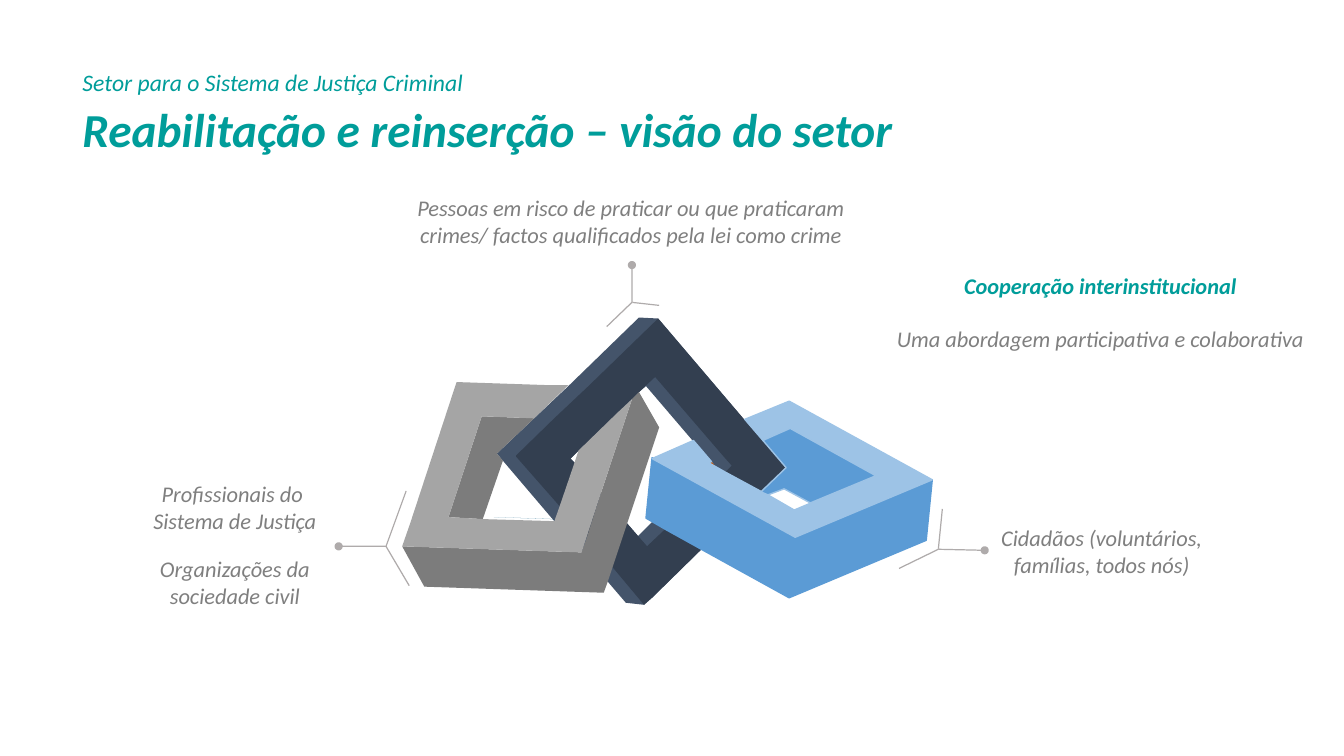
import math

import pptx
import pptx.dml.color
import pptx.enum.text
import pptx.util

Cm = pptx.util.Cm
Pt = pptx.util.Pt
RGBColor = pptx.dml.color.RGBColor
ANCHOR = pptx.enum.text.MSO_ANCHOR
ALIGN = pptx.enum.text.PP_ALIGN

TEAL = RGBColor(0x00, 0x9D, 0x9A)
TEXT_GRAY = RGBColor(0x7F, 0x7F, 0x7F)
CALLOUT_GRAY = RGBColor(0xAF, 0xAB, 0xAB)
LINK_GRAY = RGBColor(0xA5, 0xA5, 0xA5)
LINK_GRAY_DARK = RGBColor(0x7C, 0x7C, 0x7C)
NAVY = RGBColor(0x33, 0x3F, 0x50)
NAVY_LIGHT = RGBColor(0x44, 0x54, 0x6A)
PETROL = RGBColor(0x18, 0x66, 0x89)
ORANGE = RGBColor(0xC5, 0x5A, 0x11)
BLUE = RGBColor(0x5B, 0x9B, 0xD5)
BLUE_LIGHT = RGBColor(0x9D, 0xC3, 0xE6)

FONT = "Calibri"
GRID = Cm(2.54) // 100
DOT_RADIUS = 4
DOT_CORNERS = 24
ARM_WIDTH = 1.2

NAVY_SIDES = [
    [(241, 83), (234, 89), (213, 110), (174, 147), (166, 155), (170, 159),
     (222, 219), (233, 232), (247, 218), (307, 161), (308, 160), (288, 138)],
    [(234, 15), (253, 16), (339, 117), (380, 164), (356, 188), (296, 245),
     (247, 293), (239, 300), (221, 298), (203, 277), (150, 217), (93, 150),
     (130, 115), (164, 83)],
]
NAVY_FACE = [
    [(253, 16), (339, 117), (380, 164), (356, 188), (320, 168), (326, 162),
     (318, 153), (250, 74), (234, 89), (213, 110), (174, 147), (166, 155),
     (170, 159), (222, 219), (242, 242), (260, 225), (296, 245), (247, 293),
     (239, 300), (208, 263), (156, 203), (112, 153), (112, 152), (150, 115),
     (184, 83)],
]
GRAY_GLINT = [[(150, 215), (149, 215), (90, 213)]]
GRAY_INSIDE = [
    [(99, 157), (93, 150), (130, 115), (78, 113), (45, 213), (79, 215)],
]
GRAY_SIDE = [
    [(234, 89), (227, 96), (196, 190), (182, 234), (177, 248), (-1, 242),
     (21, 282), (199, 288), (203, 277), (222, 220), (254, 124)],
]
GRAY_FACE = [
    [(212, 110), (174, 147), (170, 159), (155, 203), (150, 217), (80, 215),
     (45, 213), (78, 113), (130, 115), (164, 82), (142, 82), (53, 79),
     (7, 219), (-1, 242), (177, 248), (196, 190), (227, 96)],
]
BLUE_JOINT = [[(307, 167), (311, 164), (305, 157), (297, 161)]]
BLUE_SIDE = [
    [(390, 233), (338, 204), (289, 177), (247, 154), (241, 214), (260, 225),
     (296, 245), (383, 293), (519, 236), (525, 176)],
]
BLUE_FACE = [
    [(383, 98), (344, 114), (339, 116), (357, 137), (384, 125), (469, 172),
     (388, 206), (362, 191), (356, 188), (319, 168), (303, 159), (306, 158),
     (288, 137), (247, 155), (289, 178), (338, 205), (389, 233), (525, 176)],
]
BLUE_INSIDE = [
    [(378, 185), (404, 199), (469, 172), (384, 125), (357, 137), (380, 164),
     (355, 188), (362, 191)],
]

LINK_PARTS = [
    (NAVY_SIDES, NAVY_LIGHT, None),
    (NAVY_FACE, NAVY, None),
    (GRAY_GLINT, PETROL, None),
    (GRAY_INSIDE, LINK_GRAY_DARK, None),
    (GRAY_SIDE, LINK_GRAY_DARK, None),
    (GRAY_FACE, LINK_GRAY, None),
    (BLUE_JOINT, ORANGE, None),
    (BLUE_SIDE, BLUE, BLUE),
    (BLUE_FACE, BLUE_LIGHT, BLUE_LIGHT),
    (BLUE_INSIDE, BLUE, BLUE_LIGHT),
]

CALLOUTS = [
    ((-64, 242), (-17, 242), [(3, 187), (6, 281)]),
    ((227, -37), (227, 0), [(202, 24), (254, 3)]),
    ((577, 246), (531, 245), [(535, 205), (492, 264)]),
]
LABELS = [
    ("Cidadãos (voluntários, famílias, todos nós)", (592, 214, 202, 64)),
    ("Profissionais do \nSistema de Justiça", (-261, 171, 188, 64)),
    ("Pessoas em risco de praticar ou que praticaram crimes/ factos "
     "qualificados pela lei como crime", (8, -113, 436, 64)),
    ("Organizações da sociedade civil", (-261, 245, 188, 64)),
]


def style_runs(paragraph, size, color, bold=False):
    for run in paragraph.runs:
        run.font.name = FONT
        run.font.size = Pt(size)
        run.font.color.rgb = color
        run.font.bold = bold
        run.font.italic = True


def add_text(slide, box, text, size, color, bold=False, align=ALIGN.LEFT):
    label = slide.shapes.add_textbox(*box)
    frame = label.text_frame
    frame.text = text
    frame.word_wrap = True
    for paragraph in frame.paragraphs:
        paragraph.alignment = align
        style_runs(paragraph, size, color, bold)
    return frame


def add_heading(slide, left, top, width):
    add_text(slide, (left, top, width, Cm(0.99)),
             "Setor para o Sistema de Justiça Criminal", 16.9, TEAL)
    add_text(slide, (left, top + Cm(0.81), width, Cm(1.7)),
             "Reabilitação e reinserção – visão do setor", 33.8, TEAL, True)


def add_cooperation(slide, left, top, width, height):
    frame = add_text(slide, (left, top, width, height),
                     "Cooperação interinstitucional\n"
                     "Uma abordagem participativa e colaborativa",
                     16, TEAL, True, ALIGN.CENTER)
    approach = frame.paragraphs[1]
    approach.space_before = Pt(19)
    style_runs(approach, 16, TEXT_GRAY)


def add_outlines(slide, left, top, outlines, fill, edge=None):
    rings = [[(x * GRID, y * GRID) for x, y in outline]
             for outline in outlines]
    builder = slide.shapes.build_freeform(*rings[0][0])
    builder.add_line_segments(rings[0][1:], close=True)
    for ring in rings[1:]:
        builder.move_to(*ring[0])
        builder.add_line_segments(ring[1:], close=True)
    part = builder.convert_to_shape(left, top)
    part.shadow.inherit = False
    part.fill.solid()
    part.fill.fore_color.rgb = fill
    if edge is None:
        part.line.fill.background()
    else:
        part.line.color.rgb = edge
        part.line.width = Pt(1)


def arm_outline(start, end):
    dx, dy = end[0] - start[0], end[1] - start[1]
    half = ARM_WIDTH / 2 / math.hypot(dx, dy)
    nx, ny = -dy * half, dx * half
    return [(start[0] + nx, start[1] + ny), (end[0] + nx, end[1] + ny),
            (end[0] - nx, end[1] - ny), (start[0] - nx, start[1] - ny)]


def add_callout(slide, left, top, dot, fork, tips):
    angles = [math.tau * i / DOT_CORNERS for i in range(DOT_CORNERS)]
    knob = [(dot[0] + DOT_RADIUS * math.cos(angle),
             dot[1] + DOT_RADIUS * math.sin(angle)) for angle in angles]
    reach = 1 - DOT_RADIUS / math.dist(dot, fork)
    stem_end = [f + (d - f) * reach for d, f in zip(dot, fork)]
    arms = [arm_outline(fork, end) for end in [stem_end, *tips]]
    add_outlines(slide, left, top, [knob, *arms], CALLOUT_GRAY)


def add_chain(slide, left, top):
    for outlines, fill, edge in LINK_PARTS:
        add_outlines(slide, left, top, outlines, fill, edge)
    for dot, fork, tips in CALLOUTS:
        add_callout(slide, left, top, dot, fork, tips)
    for text, (x, y, width, height) in LABELS:
        box = (left + x * GRID, top + y * GRID, width * GRID, height * GRID)
        frame = add_text(slide, box, text, 16, TEXT_GRAY, align=ALIGN.CENTER)
        frame.vertical_anchor = ANCHOR.BOTTOM
        frame.margin_left = frame.margin_right = 0


def main():
    deck = pptx.Presentation()
    deck.slide_width = Cm(33.87)
    deck.slide_height = Cm(19.05)
    slide = deck.slides.add_slide(deck.slide_layouts[6])
    add_cooperation(slide, Cm(22.33), Cm(6.73), Cm(10.8), Cm(3))
    add_chain(slide, Cm(10.16), Cm(7.62))
    add_heading(slide, Cm(1.83), Cm(1.58), Cm(24.3))
    deck.save("out.pptx")


if __name__ == "__main__":
    main()
